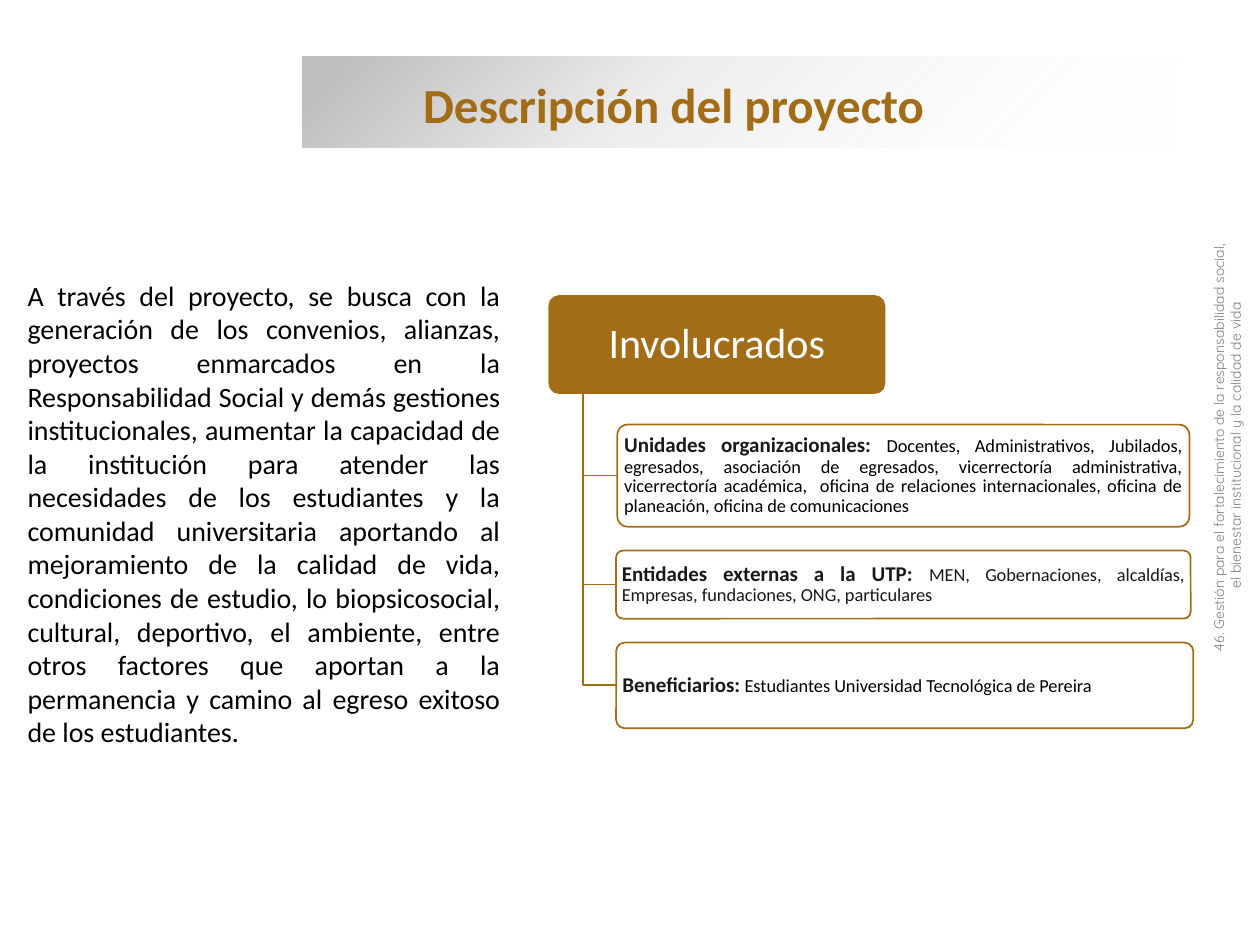
from dataclasses import dataclass

from lxml import etree
from pptx import Presentation
from pptx.dml.color import RGBColor
from pptx.enum.shapes import MSO_SHAPE
from pptx.enum.text import MSO_ANCHOR, PP_ALIGN
from pptx.oxml.ns import qn
from pptx.util import Inches, Pt

RECTANGLE, ROUNDED = MSO_SHAPE.RECTANGLE, MSO_SHAPE.ROUNDED_RECTANGLE
LEFT, CENTER, JUSTIFY = PP_ALIGN.LEFT, PP_ALIGN.CENTER, PP_ALIGN.JUSTIFY
TOP, MIDDLE = MSO_ANCHOR.TOP, MSO_ANCHOR.MIDDLE

OCHRE, WHITE, BLACK = "A26D16", "FFFFFF", "000000"
CHARCOAL, GREY, SILVER = "191919", "808080", "BFBFBF"
TRUNK_X, TRUNK_TOP = 4.63, 3.11


@dataclass
class Box:
    left: float
    top: float
    width: float
    height: float

    def lengths(self) -> tuple:
        return tuple(Inches(v) for v in (self.left, self.top, self.width, self.height))


@dataclass
class Run:
    text: str
    size: float
    color: str = BLACK
    bold: bool = False
    font: str = "Calibri"


@dataclass
class Group:
    box: Box
    runs: list[Run]


def rgb(hex_color: str) -> RGBColor:
    return RGBColor.from_string(hex_color)


def write(frame, paragraphs: list[list[Run]], align, anchor=TOP,
          insets: tuple[float, float] = (0.1, 0.05), spacing: float = 1.0) -> None:
    frame.word_wrap = True
    frame.vertical_anchor = anchor
    frame.margin_left = frame.margin_right = Inches(insets[0])
    frame.margin_top = frame.margin_bottom = Inches(insets[1])
    for index, runs in enumerate(paragraphs):
        paragraph = frame.add_paragraph() if index else frame.paragraphs[0]
        paragraph.alignment = align
        paragraph.line_spacing = spacing
        for item in runs:
            run = paragraph.add_run()
            run.text = item.text
            run.font.size = Pt(item.size)
            run.font.name = item.font
            run.font.bold = item.bold
            run.font.color.rgb = rgb(item.color)


def add_text(slide, box: Box, paragraphs: list[list[Run]], align, anchor=TOP):
    text_box = slide.shapes.add_textbox(*box.lengths())
    write(text_box.text_frame, paragraphs, align, anchor)
    return text_box


def add_card(slide, box: Box, fill: str, runs: list[Run], align,
             insets: tuple[float, float]) -> None:
    card = slide.shapes.add_shape(ROUNDED, *box.lengths())
    card.adjustments[0] = 0.1
    card.shadow.inherit = False
    card.fill.solid()
    card.fill.fore_color.rgb = rgb(fill)
    card.line.color.rgb = rgb(OCHRE)
    card.line.width = Pt(1)
    write(card.text_frame, [runs], align, MIDDLE, insets, 0.9)


def add_branch(slide, target: Box) -> None:
    """Draw the elbow from the heading down to the middle of a card's left side."""
    middle = target.top + target.height / 2
    builder = slide.shapes.build_freeform(Inches(TRUNK_X), Inches(TRUNK_TOP))
    builder.add_line_segments(
        [(Inches(TRUNK_X), Inches(middle)), (Inches(target.left), Inches(middle))],
        close=False)
    branch = builder.convert_to_shape()
    branch.shadow.inherit = False
    branch.fill.background()
    branch.line.color.rgb = rgb(OCHRE)
    branch.line.width = Pt(1)


def add_title_band(slide, box: Box) -> None:
    """Draw a band that fades from silver to clear along its diagonal."""
    band = slide.shapes.add_shape(RECTANGLE, *box.lengths())
    band.shadow.inherit = False
    band.line.fill.background()
    band.fill.gradient()
    gradient = band._element.spPr.find(qn("a:gradFill"))
    gradient.find(qn("a:lin")).set("ang", str(45 * 60000))
    stops = gradient.find(qn("a:gsLst"))
    for stop in list(stops):
        stops.remove(stop)
    for position, color, opacity in ((5, SILVER, 100), (37, SILVER, 31), (100, WHITE, 0)):
        stop = etree.SubElement(stops, qn("a:gs"), pos=str(position * 1000))
        tone = etree.SubElement(stop, qn("a:srgbClr"), val=color)
        etree.SubElement(tone, qn("a:alpha"), val=str(opacity * 1000))


GROUPS = [
    Group(Box(4.9, 3.37, 4.54, 0.81), [
        Run("Unidades organizacionales: ", 12, CHARCOAL, True),
        Run("Docentes, Administrativos, Jubilados, egresados, asociación de egresados, "
            "vicerrectoría administrativa, vicerrectoría académica,  oficina de relaciones "
            "internacionales, oficina de planeación, oficina de comunicaciones", 10.5)]),
    Group(Box(4.89, 4.37, 4.56, 0.54), [
        Run("Entidades externas a la UTP: ", 12, CHARCOAL, True),
        Run("MEN, Gobernaciones, alcaldías, Empresas, fundaciones, ONG, particulares",
            10.5, CHARCOAL)]),
    Group(Box(4.89, 5.1, 4.58, 0.68), [
        Run("Beneficiarios:", 12, CHARCOAL, True),
        Run(" ", 10.5, CHARCOAL, True),
        Run("Estudiantes Universidad Tecnológica de Pereira", 10.5)]),
]

SUMMARY = (
    "A través del proyecto, se busca con la generación de los convenios, alianzas, "
    "proyectos enmarcados en la Responsabilidad Social y demás gestiones institucionales, "
    "aumentar la capacidad de la institución para atender las necesidades de los "
    "estudiantes y la comunidad universitaria aportando al mejoramiento de la calidad de "
    "vida, condiciones de estudio, lo biopsicosocial, cultural, deportivo, el ambiente, "
    "entre otros factores que aportan a la permanencia y camino al egreso exitoso de los "
    "estudiantes.")

PROGRAM_LINES = [
    "46. Gestión para el fortalecimiento de la responsabilidad social, ",
    "el bienestar institucional y la calidad de vida",
]


def main() -> None:
    deck = Presentation()
    deck.slide_width, deck.slide_height = Inches(10), Inches(7.5)
    slide = deck.slides.add_slide(deck.slide_layouts[6])

    add_title_band(slide, Box(2.4, 0.45, 6.98, 0.72))
    add_text(slide, Box(3.26, 0.54, 6.2, 0.57),
             [[Run("Descripción del proyecto", 28, OCHRE, True)]], LEFT, MIDDLE)

    add_card(slide, Box(4.36, 2.35, 2.66, 0.77), OCHRE,
             [Run("Involucrados", 24, WHITE)], CENTER, (0.05, 0.03))
    for group in GROUPS:
        add_branch(slide, group.box)
        add_card(slide, group.box, WHITE, group.runs, JUSTIFY, (0.03, 0.02))

    add_text(slide, Box(0.12, 2.16, 3.95, 3.87), [[Run(SUMMARY, 16)]], JUSTIFY)
    program = add_text(slide, Box(7.32, 3.35, 4.84, 0.37),
                       [[Run(line, 8, GREY, font="Quicksand")] for line in PROGRAM_LINES],
                       CENTER)
    program.rotation = 270

    deck.save("out.pptx")


if __name__ == "__main__":
    main()
